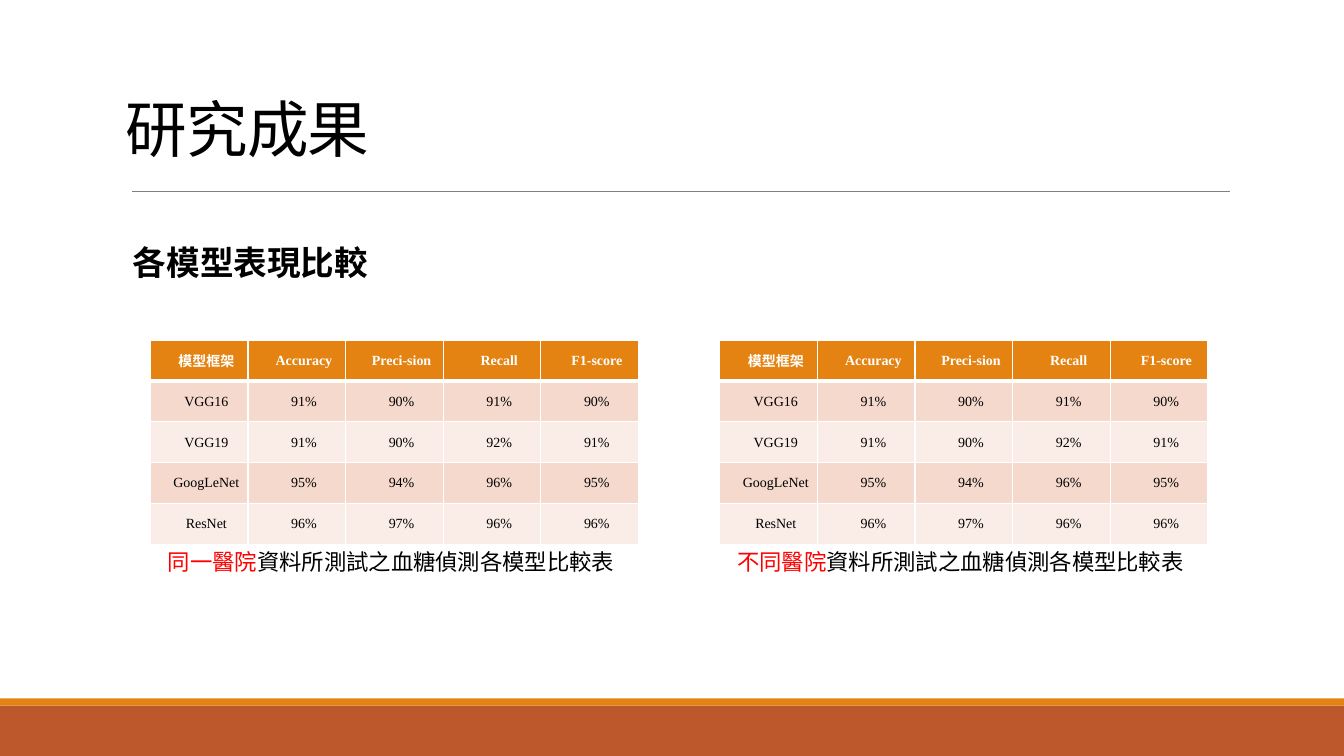
import pptx
import pptx.dml.color
import pptx.enum.shapes
import pptx.enum.text
import pptx.oxml.ns
import pptx.util
from lxml import etree
from pptx.util import Cm, Pt

# Content
HEADING = "研究成果"
SUBHEADING = "各模型表現比較"
METRICS = ["模型框架", "Accuracy", "Preci-sion", "Recall", "F1-score"]
SCORES = [
    ["VGG16", "91%", "90%", "91%", "90%"],
    ["VGG19", "91%", "90%", "92%", "91%"],
    ["GoogLeNet", "95%", "94%", "96%", "95%"],
    ["ResNet", "96%", "97%", "96%", "96%"],
]
CAPTION = "資料所測試之血糖偵測各模型比較表"
COMPARISONS = [("同一醫院", SCORES), ("不同醫院", SCORES)]

# Style
COLORS = {
    "text": "000000", "white": "FFFFFF", "accent": "FF0000", "rule": "808080",
    "header": "E48312", "footer": "BD582C", "band_dark": "F5D9CC", "band_light": "FAEDE7",
}
LATIN, CJK = "Times New Roman", "Noto Sans CJK SC"

# Layout in centimetres
WIDTH, HEIGHT = 33.87, 19.05
TABLE_LEFT, TABLE_TOP, TABLE_GAP = 3.79, 8.57, 14.35
COLUMN_WIDTH, ROW_HEIGHT = 2.46, 1.03


def rgb(name):
    return pptx.dml.color.RGBColor.from_string(COLORS[name])


def set_font(font, size, color, name=LATIN, bold=False):
    font.name, font.size, font.bold = name, Pt(size), bold
    font.color.rgb = rgb(color)


def set_east_asian(paragraph):
    for run in paragraph.runs:
        east_asian = etree.SubElement(run._r.get_or_add_rPr(), pptx.oxml.ns.qn("a:ea"))
        east_asian.set("typeface", CJK)


def add_text(slide, left, top, width, height):
    frame = slide.shapes.add_textbox(Cm(left), Cm(top), Cm(width), Cm(height)).text_frame
    frame.word_wrap = True
    return frame.paragraphs[0]


def add_bar(slide, top, height, color):
    bar = slide.shapes.add_shape(
        pptx.enum.shapes.MSO_SHAPE.RECTANGLE, 0, Cm(top), Cm(WIDTH), Cm(height))
    bar.shadow.inherit = False
    bar.fill.solid()
    bar.fill.fore_color.rgb = rgb(color)
    bar.line.fill.background()


def set_borders(cell, row):
    widths = {"lnL": 1, "lnR": 1, "lnT": 3 if row == 1 else 1, "lnB": 3 if row == 0 else 1}
    properties = cell._tc.get_or_add_tcPr()
    for index, (side, width) in enumerate(widths.items()):
        border = etree.Element(pptx.oxml.ns.qn("a:" + side), w=str(Pt(width)))
        fill = etree.SubElement(border, pptx.oxml.ns.qn("a:solidFill"))
        etree.SubElement(fill, pptx.oxml.ns.qn("a:srgbClr"), val=COLORS["white"])
        properties.insert(index, border)


def add_scores(slide, left, scores):
    rows = [METRICS] + scores
    table = slide.shapes.add_table(
        len(rows), len(METRICS), Cm(left), Cm(TABLE_TOP),
        Cm(COLUMN_WIDTH * len(METRICS)), Cm(ROW_HEIGHT * len(rows))).table
    table.horz_banding = False
    for column in table.columns:
        column.width = Cm(COLUMN_WIDTH)
    for r, values in enumerate(rows):
        table.rows[r].height = Cm(ROW_HEIGHT)
        band = "header" if r == 0 else "band_dark" if r % 2 else "band_light"
        for c, value in enumerate(values):
            cell = table.cell(r, c)
            cell.margin_left = cell.margin_right = Cm(0.18)
            cell.margin_top = cell.margin_bottom = 0
            cell.vertical_anchor = pptx.enum.text.MSO_ANCHOR.MIDDLE
            cell.fill.solid()
            cell.fill.fore_color.rgb = rgb(band)
            set_borders(cell, r)
            paragraph = cell.text_frame.paragraphs[0]
            paragraph.text = value
            paragraph.alignment = pptx.enum.text.PP_ALIGN.CENTER
            paragraph._p.get_or_add_pPr().set("indent", str(Cm(0.36)))
            set_font(paragraph.font, 10, "text" if r else "white", bold=r == 0)
            set_east_asian(paragraph)


def main():
    deck = pptx.Presentation()
    deck.slide_width, deck.slide_height = Cm(WIDTH), Cm(HEIGHT)
    slide = deck.slides.add_slide(deck.slide_layouts[5])

    # Footer bars and rule under the title
    add_bar(slide, 17.78, 1.27, "footer")
    add_bar(slide, 17.6, 0.18, "header")
    rule = slide.shapes.add_connector(
        pptx.enum.shapes.MSO_CONNECTOR.STRAIGHT, Cm(3.33), Cm(4.82), Cm(31), Cm(4.82))
    rule.line.color.rgb = rgb("rule")
    rule.line.width = Pt(0.5)
    etree.SubElement(rule._element.spPr, pptx.oxml.ns.qn("a:effectLst"))

    # Title
    title = slide.shapes.title
    title.left, title.top, title.width, title.height = Cm(2.9), Cm(0.61), Cm(29.21), Cm(3.68)
    title.text_frame.vertical_anchor = pptx.enum.text.MSO_ANCHOR.BOTTOM
    heading = title.text_frame.paragraphs[0]
    heading.text = HEADING
    heading.alignment = pptx.enum.text.PP_ALIGN.LEFT
    heading.line_spacing = 0.85
    set_font(heading.font, 44, "text", CJK)
    set_east_asian(heading)
    heading.runs[0]._r.get_or_add_rPr().set("spc", "-50")

    # Subheading
    subheading = add_text(slide, 1.83, 5.97, 11.51, 1.27)
    subheading.text = SUBHEADING
    subheading.alignment = pptx.enum.text.PP_ALIGN.JUSTIFY
    subheading.level = 1
    subheading._p.get_or_add_pPr().set("marL", str(Cm(1.27)))
    set_font(subheading.font, 24, "text", bold=True)
    set_east_asian(subheading)

    # Score tables with captions
    for i, (hospital, scores) in enumerate(COMPARISONS):
        left = TABLE_LEFT + i * TABLE_GAP
        add_scores(slide, left, scores)
        caption = add_text(slide, left + 0.19, 13.69, 11.91, 0.94)
        for words, color in ((hospital, "accent"), (CAPTION, "text")):
            run = caption.add_run()
            run.text = words
            set_font(run.font, 16, color)
        set_east_asian(caption)

    deck.save("out.pptx")


if __name__ == "__main__":
    main()
